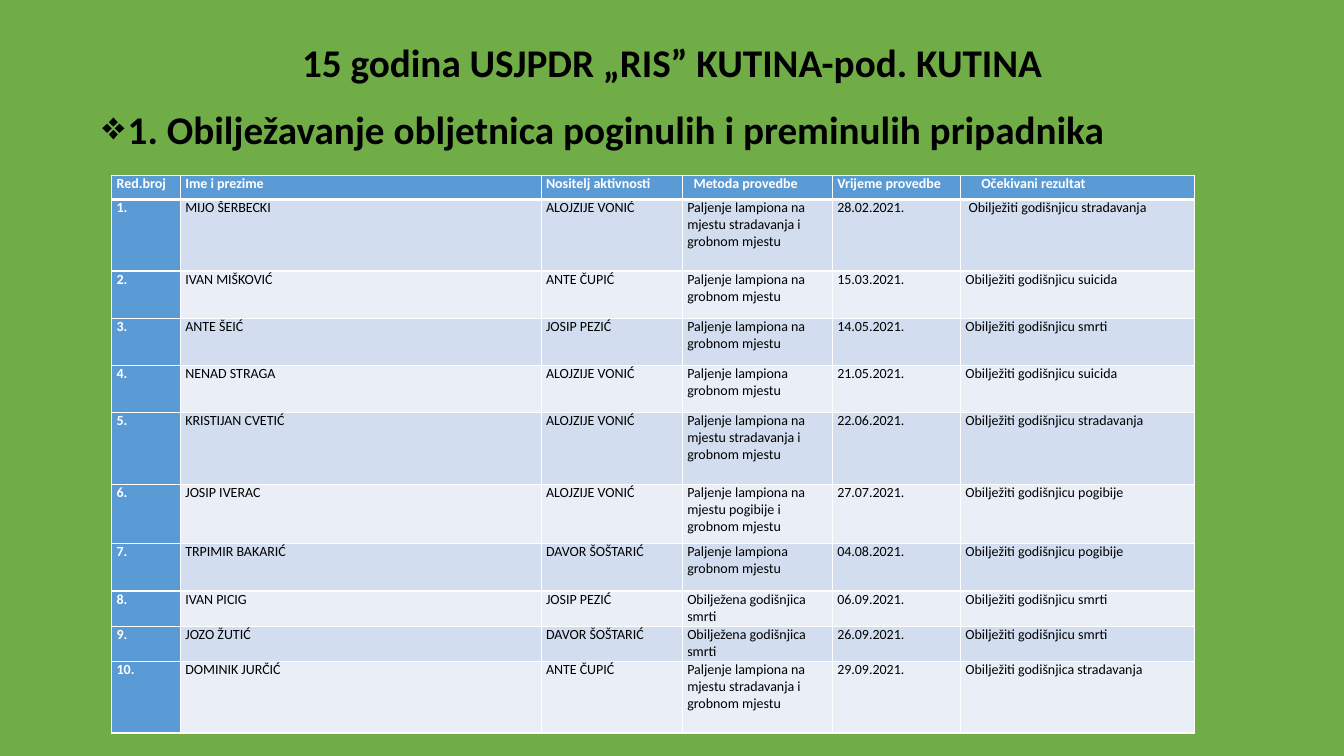
from lxml.etree import SubElement
from pptx import Presentation
from pptx.dml.color import RGBColor
from pptx.enum.text import MSO_ANCHOR, PP_ALIGN
from pptx.oxml.ns import qn
from pptx.util import Cm, Pt

GREEN = RGBColor(0x70, 0xAD, 0x47)
BLUE = RGBColor(0x5B, 0x9B, 0xD5)
BAND_DARK = RGBColor(0xD2, 0xDE, 0xEF)
BAND_LIGHT = RGBColor(0xEA, 0xEF, 0xF7)
WHITE = RGBColor(0xFF, 0xFF, 0xFF)
BLACK = RGBColor(0, 0, 0)

HEADINGS = ["Red.broj", "Ime i prezime", "Nositelj aktivnosti",
            "Metoda provedbe", "Vrijeme provedbe", "Očekivani rezultat"]
COLUMN_WIDTHS = [1.73, 9.09, 3.56, 3.78, 3.23, 5.89]
ROW_HEIGHTS = [0.61, 1.8, 1.19, 1.19, 1.19, 1.8, 1.5, 1.19, 0.89, 0.89, 1.8]

AT_DEATH_SITE = "Paljenje lampiona na mjestu stradavanja i grobnom mjestu"
AT_FALL_SITE = "Paljenje lampiona na mjestu pogibije i grobnom mjestu"
ON_GRAVE = "Paljenje lampiona na grobnom mjestu"
GRAVE = "Paljenje lampiona grobnom mjestu"
MARKED = "Obilježena godišnjica smrti"
MARK = "Obilježiti godišnjicu "

ANNIVERSARIES = [
    ("MIJO ŠERBECKI", "ALOJZIJE VONIĆ", AT_DEATH_SITE, "28.02.2021.", MARK + "stradavanja"),
    ("IVAN MIŠKOVIĆ", "ANTE ČUPIĆ", ON_GRAVE, "15.03.2021.", MARK + "suicida"),
    ("ANTE ŠEIĆ", "JOSIP PEZIĆ", ON_GRAVE, "14.05.2021.", MARK + "smrti"),
    ("NENAD STRAGA", "ALOJZIJE VONIĆ", GRAVE, "21.05.2021.", MARK + "suicida"),
    ("KRISTIJAN CVETIĆ", "ALOJZIJE VONIĆ", AT_DEATH_SITE, "22.06.2021.", MARK + "stradavanja"),
    ("JOSIP IVERAC", "ALOJZIJE VONIĆ", AT_FALL_SITE, "27.07.2021.", MARK + "pogibije"),
    ("TRPIMIR BAKARIĆ", "DAVOR ŠOŠTARIĆ", GRAVE, "04.08.2021.", MARK + "pogibije"),
    ("IVAN PICIG", "JOSIP PEZIĆ", MARKED, "06.09.2021.", MARK + "smrti"),
    ("JOZO ŽUTIĆ", "DAVOR ŠOŠTARIĆ", MARKED, "26.09.2021.", MARK + "smrti"),
    ("DOMINIK JURČIĆ", "ANTE ČUPIĆ", AT_DEATH_SITE, "29.09.2021.",
     "Obilježiti godišnjica stradavanja"),
]
# Extra left margin in cm, by (row, column)
CELL_INDENTS = {(0, 3): 0.16, (0, 5): 0.4, (1, 5): 0.08}


def apply_format(target, values):
    for name, value in values.items():
        setattr(target, name, value)


class SlideBuilder:
    def __init__(self, page, font="Calibri"):
        self.page = page
        self.font = font

    def background(self, color):
        fill = self.page.background.fill
        fill.solid()
        fill.fore_color.rgb = color

    def add_span(self, para, text, size, color, bold):
        span = para.add_run()
        span.text = text
        apply_format(span.font, {"name": self.font, "size": Pt(size), "bold": bold})
        span.font.color.rgb = color

    def heading(self, text, left, top, width, height, frame_format, para_format):
        box = self.page.shapes.add_textbox(Cm(left), Cm(top), Cm(width), Cm(height))
        apply_format(box.text_frame, {"word_wrap": True, **frame_format})
        para = box.text_frame.paragraphs[0]
        apply_format(para, {"line_spacing": 0.9, **para_format})
        self.add_span(para, text, 28, BLACK, True)
        return para

    def bullet(self, para, symbol, indent):
        properties = para._p.get_or_add_pPr()
        properties.set("marL", str(Cm(indent)))
        properties.set("indent", str(-Cm(indent)))
        SubElement(properties, qn("a:buChar"), char=symbol)

    def borders(self, cell, widths):
        """Draw white cell borders; widths maps L, R, T, B to points."""
        properties = cell._tc.get_or_add_tcPr()
        for side, width in widths.items():
            line = SubElement(properties, qn("a:ln" + side), w=str(Pt(width)))
            fill = SubElement(line, qn("a:solidFill"))
            SubElement(fill, qn("a:srgbClr"), val=str(WHITE))

    def cell(self, cell, text, row, column):
        is_label = row == 0 or column == 0
        self.borders(cell, {"L": 1, "R": 1, "T": 3 if row == 1 else 1,
                            "B": 3 if row == 0 else 1})
        cell.fill.solid()
        band = BAND_DARK if row % 2 else BAND_LIGHT
        cell.fill.fore_color.rgb = BLUE if is_label else band
        indent = CELL_INDENTS.get((row, column), 0)
        apply_format(cell, {"margin_left": Cm(0.12 + indent), "margin_right": Cm(0.12),
                            "margin_top": 0, "margin_bottom": 0})
        self.add_span(cell.text_frame.paragraphs[0], text, 10,
                      WHITE if is_label else BLACK, is_label)

    def table(self, rows, left, top, widths, heights):
        table = self.page.shapes.add_table(
            len(rows), len(widths), Cm(left), Cm(top),
            Cm(sum(widths)), Cm(sum(heights))).table
        for column, width in zip(table.columns, widths):
            column.width = Cm(width)
        for table_row, height in zip(table.rows, heights):
            table_row.height = Cm(height)
        for row, texts in enumerate(rows):
            for column, text in enumerate(texts):
                self.cell(table.cell(row, column), text, row, column)


def main():
    deck = Presentation()
    apply_format(deck, {"slide_width": Cm(33.87), "slide_height": Cm(19.05)})
    builder = SlideBuilder(deck.slides.add_slide(deck.slide_layouts[6]))
    builder.background(GREEN)
    builder.heading("15 godina USJPDR „RIS” KUTINA-pod. KUTINA",
                    2.33, 0.6, 29.21, 2.08,
                    {"vertical_anchor": MSO_ANCHOR.MIDDLE},
                    {"alignment": PP_ALIGN.CENTER})
    subtitle = builder.heading(
        "1. Obilježavanje obljetnica poginulih i preminulih pripadnika",
        2.33, 2.67, 29.21, 15.82,
        {"vertical_anchor": MSO_ANCHOR.TOP}, {"space_before": Pt(10)})
    builder.bullet(subtitle, "❖", 0.64)
    numbered = [(f"{number}.", *entry)
                for number, entry in enumerate(ANNIVERSARIES, 1)]
    builder.table([HEADINGS, *numbered], 2.82, 4.42, COLUMN_WIDTHS, ROW_HEIGHTS)
    deck.save("out.pptx")


if __name__ == "__main__":
    main()
